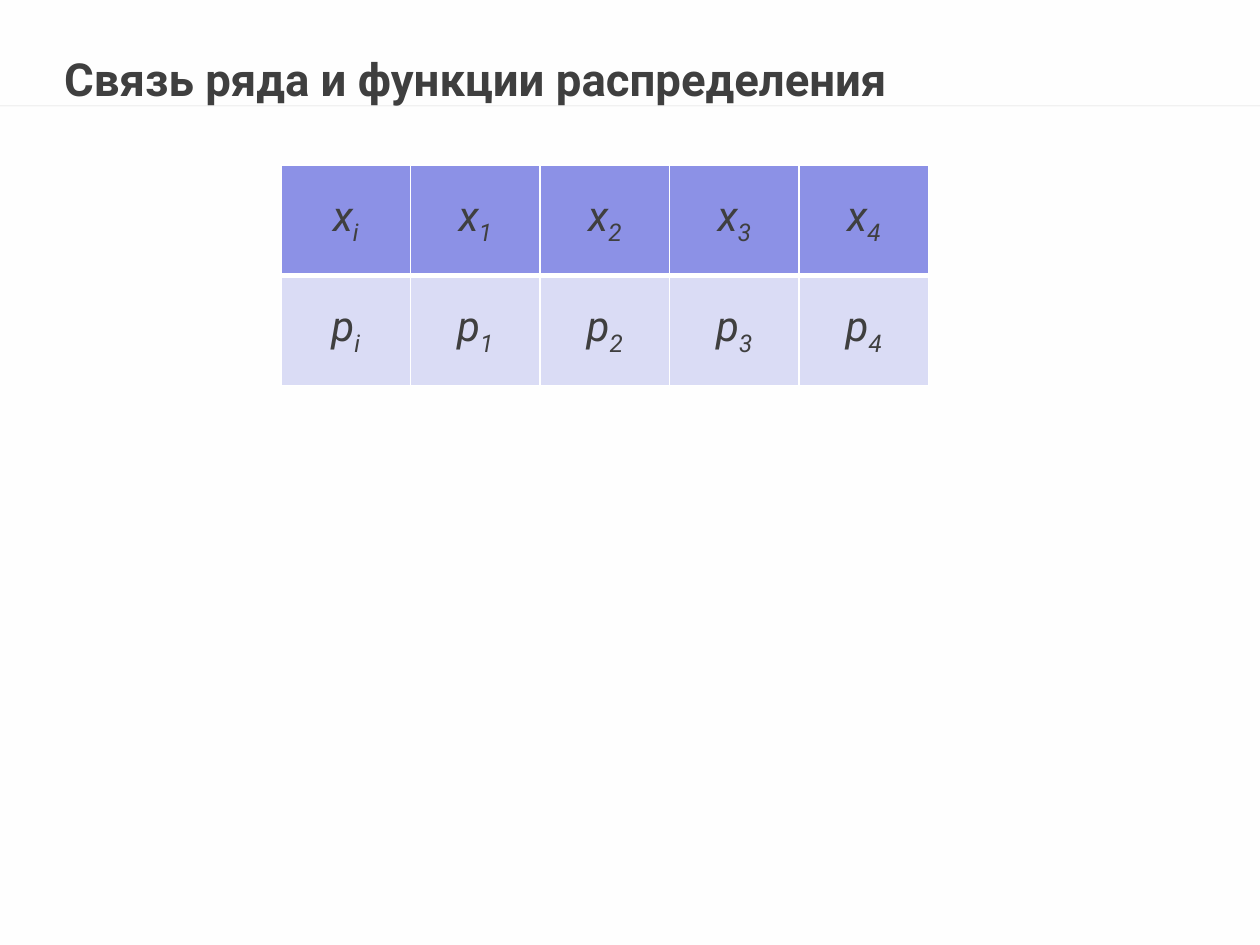
from lxml import etree
from pptx import Presentation
from pptx.dml.color import RGBColor
from pptx.enum import shapes, text
from pptx.oxml import ns
from pptx.util import Inches, Pt

COLORS = {
    "background": "FEFEFE",
    "white": "FFFFFF",
    "rule": "7F7F7F",
    "text": "3F3F3F",
    "header": "8C91E6",
    "body": "DADCF5",
}
FONT = "Roboto"


def set_alpha(fill_parent, percent):
    """Make the solid fill inside an XML element partly transparent."""
    color = fill_parent.find(ns.qn("a:solidFill"))[0]
    etree.SubElement(color, ns.qn("a:alpha"), val=str(percent * 1000))


def add_border(cell, position, side, points):
    """Put a white border in its place before the cell's fill."""
    line = etree.Element(ns.qn(f"a:ln{side}"), w=str(Pt(points)))
    fill = etree.SubElement(line, ns.qn("a:solidFill"))
    etree.SubElement(fill, ns.qn("a:srgbClr"), val=COLORS["white"])
    cell._tc.get_or_add_tcPr().insert(position, line)


prs = Presentation()
prs.slide_width, prs.slide_height = Inches(10), Inches(7.5)
slide = prs.slides.add_slide(prs.slide_layouts[6])
slide.background.fill.solid()
slide.background.fill.fore_color.rgb = RGBColor.from_string(COLORS["background"])

# Header band and the rule below it
band_height = Inches(0.84)
band = slide.shapes.add_shape(
    shapes.MSO_SHAPE.RECTANGLE, 0, 0, prs.slide_width, band_height)
band.shadow.inherit = False
band.fill.solid()
band.fill.fore_color.rgb = RGBColor.from_string(COLORS["white"])
set_alpha(band._element.spPr, 50)
band.line.fill.background()

rule = slide.shapes.add_connector(
    shapes.MSO_CONNECTOR.STRAIGHT, 0, band_height, prs.slide_width, band_height)
rule.line.width = Pt(0.75)
rule.line.color.rgb = RGBColor.from_string(COLORS["rule"])
set_alpha(rule.line._get_or_add_ln(), 10)
etree.SubElement(rule._element.spPr, ns.qn("a:effectLst"))

# Title
title = slide.shapes.add_textbox(
    Inches(0.51), Inches(0.24), Inches(8.82), Inches(0.84)).text_frame
title.word_wrap = True
title.margin_left = title.margin_right = title.margin_top = title.margin_bottom = 0
title.vertical_anchor = text.MSO_ANCHOR.MIDDLE
title.text = "Связь ряда и функции распределения"
title.paragraphs[0].line_spacing = 0.8
title_font = title.paragraphs[0].runs[0].font
title_font.name, title_font.size, title_font.bold = FONT, Pt(26), True
title_font.color.rgb = RGBColor.from_string(COLORS["text"])

# Distribution series: values x over probabilities p
symbols = ["x", "p"]
indices = ["i", "1", "2", "3", "4"]
row_fills = [COLORS["header"], COLORS["body"]]
row_borders = [
    {"L": 1, "R": 1, "T": 1, "B": 3},
    {"L": 1, "R": 1, "T": 3, "B": 1},
]
series = slide.shapes.add_table(
    len(symbols), len(indices),
    Inches(2.23), Inches(1.31), Inches(5.14), Inches(1.75)).table

for row, symbol in enumerate(symbols):
    for column, index in enumerate(indices):
        cell = series.cell(row, column)
        cell.fill.solid()
        cell.fill.fore_color.rgb = RGBColor.from_string(row_fills[row])
        for position, (side, points) in enumerate(row_borders[row].items()):
            add_border(cell, position, side, points)
        cell.vertical_anchor = text.MSO_ANCHOR.MIDDLE
        paragraph = cell.text_frame.paragraphs[0]
        paragraph.alignment = text.PP_ALIGN.CENTER
        for part in (symbol, index):
            run = paragraph.add_run()
            run.text = part
            run.font.name, run.font.size = FONT, Pt(24)
            run.font.bold, run.font.italic = False, True
            run.font.color.rgb = RGBColor.from_string(COLORS["text"])
        run.font._element.set("baseline", "-25000")

prs.save("out.pptx")
